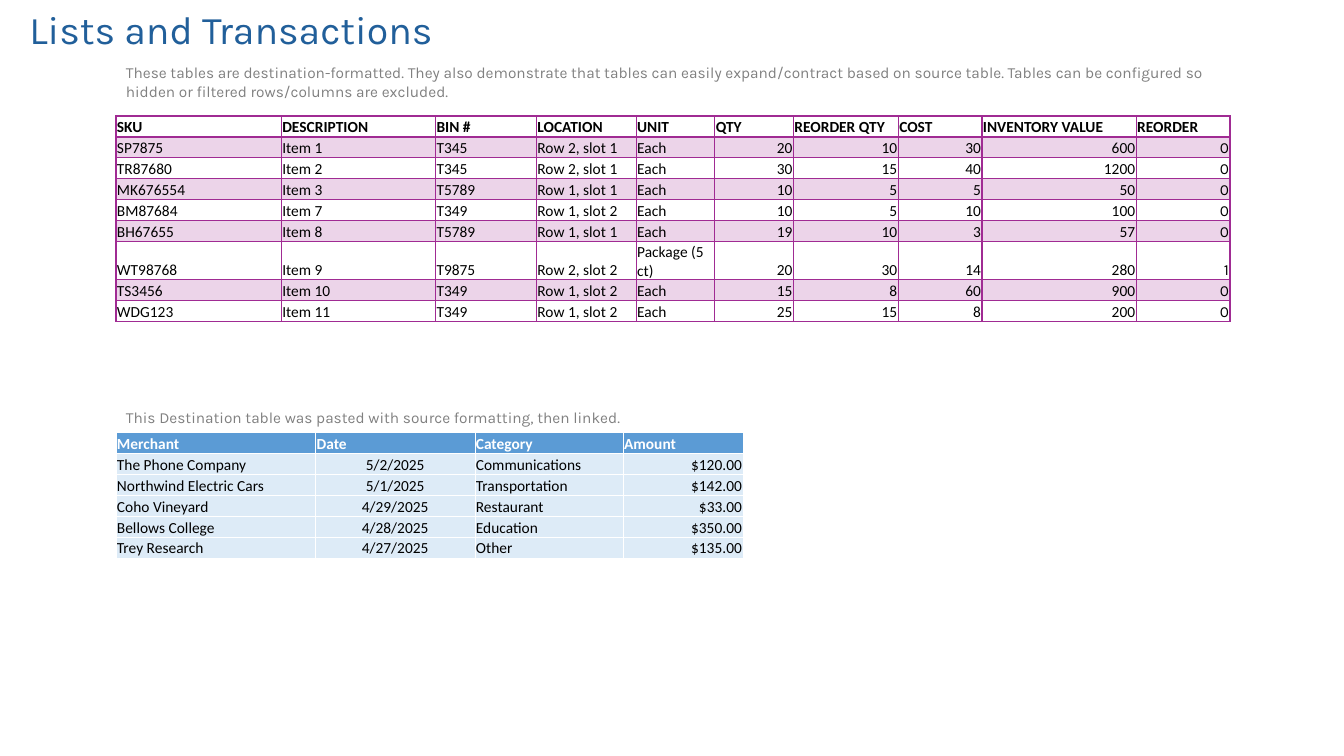
from pptx import Presentation
from pptx.dml.color import RGBColor
from pptx.enum.text import MSO_ANCHOR, MSO_AUTO_SIZE, PP_ALIGN
from pptx.oxml.ns import qn
from pptx.util import Inches, Pt
from lxml.etree import SubElement

COLORS = {
    "title": "215F9A", "note": "808080", "ink": "000000", "white": "FFFFFF",
    "plum": "A02B93", "blue": "5B9BD5", "pale": "DDEBF7",
}
TITLE = "Lists and Transactions"
NOTES = [
    (0.58, 0.47, "These tables are destination-formatted. They also demonstrate that "
     "tables can easily expand/contract based on source table. Tables can be "
     "configured so hidden or filtered rows/columns are excluded."),
    (4, 0.29, "This Destination table was pasted with source formatting, then linked."),
]
STOCK = [
    ("SKU", "DESCRIPTION", "BIN #", "LOCATION", "UNIT", "QTY", "REORDER QTY",
     "COST", "INVENTORY VALUE", "REORDER"),
    ("SP7875", "Item 1", "T345", "Row 2, slot 1", "Each", "20", "10", "30", "600", "0"),
    ("TR87680", "Item 2", "T345", "Row 2, slot 1", "Each", "30", "15", "40", "1200", "0"),
    ("MK676554", "Item 3", "T5789", "Row 1, slot 1", "Each", "10", "5", "5", "50", "0"),
    ("BM87684", "Item 7", "T349", "Row 1, slot 2", "Each", "10", "5", "10", "100", "0"),
    ("BH67655", "Item 8", "T5789", "Row 1, slot 1", "Each", "19", "10", "3", "57", "0"),
    ("WT98768", "Item 9", "T9875", "Row 2, slot 2", "Package (5 ct)", "20", "30", "14",
     "280", "1"),
    ("TS3456", "Item 10", "T349", "Row 1, slot 2", "Each", "15", "8", "60", "900", "0"),
    ("WDG123", "Item 11", "T349", "Row 1, slot 2", "Each", "25", "15", "8", "200", "0"),
]
STOCK_COLS = [1.64, 1.53, 1, 0.99, 0.78, 0.78, 1.04, 0.83, 1.53, 0.93]
SPEND = [
    ("Merchant", "Date", "Category", "Amount"),
    ("The Phone Company", "5/2/2025", "Communications", "$120.00"),
    ("Northwind Electric Cars", "5/1/2025", "Transportation", "$142.00"),
    ("Coho Vineyard", "4/29/2025", "Restaurant", "$33.00"),
    ("Bellows College", "4/28/2025", "Education", "$350.00"),
    ("Trey Research", "4/27/2025", "Other", "$135.00"),
]
SPEND_COLS = [1.98, 1.58, 1.47, 1.19]
LEFT, ROW = 1.15, 0.208
ALIGN = {"l": PP_ALIGN.LEFT, "c": PP_ALIGN.CENTER, "r": PP_ALIGN.RIGHT}


def rgb(name):
    return RGBColor.from_string(COLORS[name])


def write(frame, text, size, color, font="Karla", bold=False, align="l"):
    para = frame.paragraphs[0]
    para.alignment = ALIGN[align]
    run = para.add_run()
    run.text = text
    run.font.size, run.font.name, run.font.bold = Pt(size), font, bold
    run.font.color.rgb = rgb(color)
    return para


def edge(cell, color, widths):
    """Draw the four cell borders; widths run left, right, top, bottom."""
    props = cell._tc.get_or_add_tcPr()
    for side, width in zip("LRTB", widths):
        line = SubElement(props, qn("a:ln" + side), w=str(Pt(width)))
        fill = SubElement(line, qn("a:solidFill"))
        SubElement(fill, qn("a:srgbClr"), val=COLORS[color])


def paint(cell, color, alpha=100):
    if color is None:
        cell.fill.background()
        return
    cell.fill.solid()
    cell.fill.fore_color.rgb = rgb(color)
    if alpha < 100:
        tint = cell._tc.tcPr.find(qn("a:solidFill")).find(qn("a:srgbClr"))
        SubElement(tint, qn("a:alpha"), val=str(alpha * 1000))


def stock_look(cell, row):
    top, bottom = (2 if row == 1 else 1), (2 if row == 0 else 1)
    edge(cell, "plum", (1, 1, top, bottom))
    paint(cell, "plum" if row % 2 else None, 20)


def spend_look(cell, row):
    edge(cell, "white", (0.5,) * 4)
    paint(cell, "pale" if row else "blue")


def add_grid(slide, top, rows, cols, aligns, look, head, last="Calibri"):
    """Place a table; last is the font of the final column's body cells."""
    frame = slide.shapes.add_table(
        len(rows), len(cols), Inches(LEFT), Inches(top),
        Inches(sum(cols)), Inches(ROW * len(rows)))
    table = frame.table
    table.first_row = table.horz_banding = False
    for col, width in zip(table.columns, cols):
        col.width = Inches(width)
    for r, texts in enumerate(rows):
        table.rows[r].height = Inches(ROW)
        for c, text in enumerate(texts):
            cell = table.cell(r, c)
            cell.margin_left = cell.margin_right = cell.margin_top = Inches(0.01)
            cell.margin_bottom = 0
            cell.vertical_anchor = MSO_ANCHOR.BOTTOM
            font = last if r and c == len(cols) - 1 else "Calibri"
            write(cell.text_frame, text, 11, "ink" if r else head, font,
                  r == 0, aligns[c] if r else "l")
            look(cell, r)


def main():
    deck = Presentation()
    deck.slide_width, deck.slide_height = Inches(13.33), Inches(7.5)
    slide = deck.slides.add_slide(deck.slide_layouts[5])

    title = slide.shapes.title
    title.left, title.top = Inches(0.19), Inches(0)
    title.width, title.height = Inches(11.5), Inches(0.64)
    title.text_frame.vertical_anchor = MSO_ANCHOR.MIDDLE
    title.text_frame.auto_size = MSO_AUTO_SIZE.NONE
    write(title.text_frame, TITLE, 28, "title").line_spacing = 0.9

    for top, height, text in NOTES:
        box = slide.shapes.add_textbox(
            Inches(LEFT), Inches(top), Inches(11.17), Inches(height))
        box.text_frame.word_wrap = True
        box.text_frame.auto_size = MSO_AUTO_SIZE.SHAPE_TO_FIT_TEXT
        write(box.text_frame, text, 11, "note")

    add_grid(slide, 1.15, STOCK, STOCK_COLS, "lllllrrrrr", stock_look, "ink", "Karla")
    add_grid(slide, 4.29, SPEND, SPEND_COLS, "lclr", spend_look, "white")
    deck.save("out.pptx")


if __name__ == "__main__":
    main()
